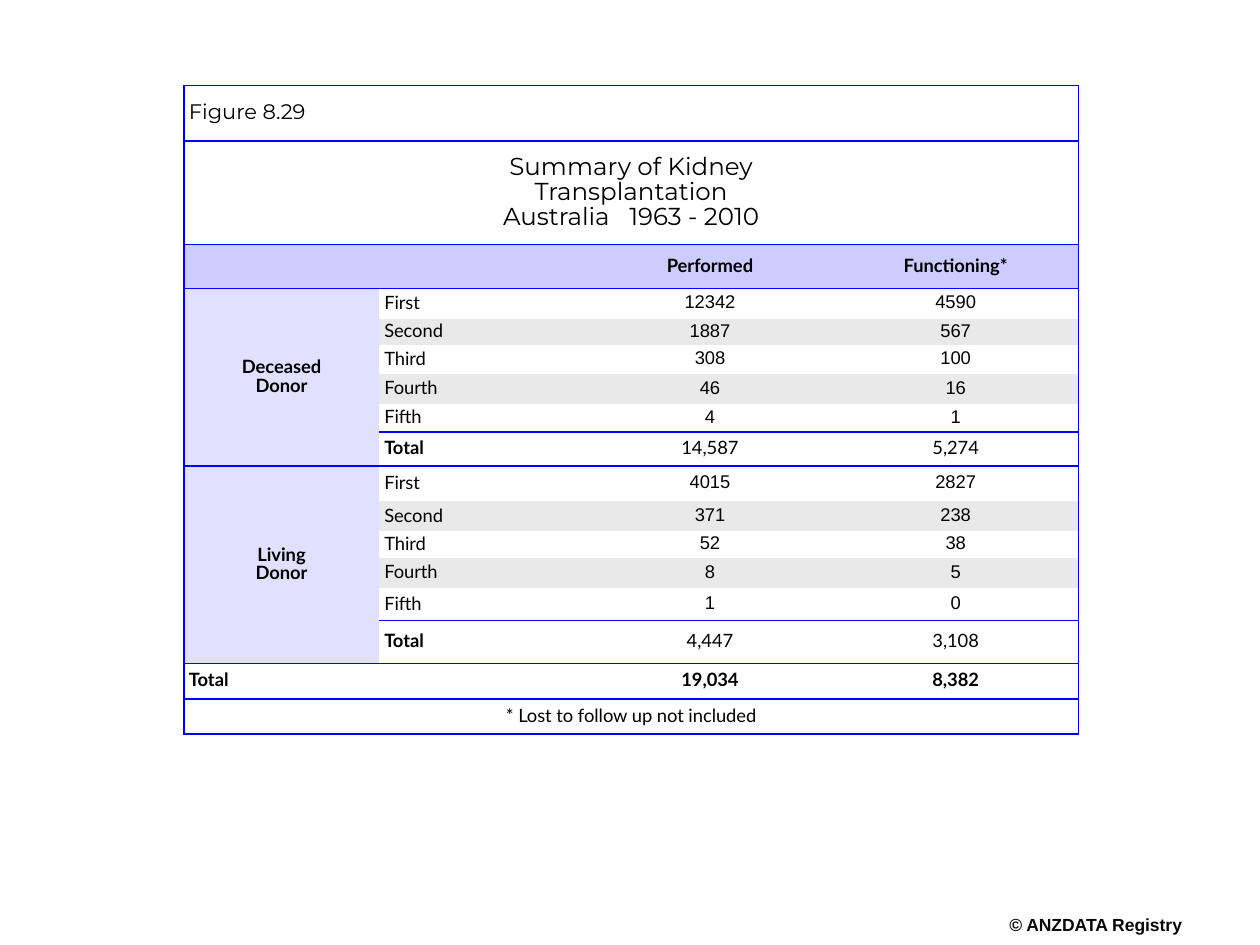
from lxml import etree
from pptx import Presentation
from pptx.dml.color import RGBColor
from pptx.enum.text import MSO_ANCHOR, PP_ALIGN
from pptx.oxml.ns import qn
from pptx.util import Inches, Pt

MIDDLE = MSO_ANCHOR.MIDDLE
LEFT, CENTER = PP_ALIGN.LEFT, PP_ALIGN.CENTER
BLACK = RGBColor(0x00, 0x00, 0x00)
INK = RGBColor(0x08, 0x08, 0x08)
BLUE = RGBColor(0x00, 0x00, 0xFF)
HEADER = RGBColor(0xCC, 0xCC, 0xFF)
DONOR = RGBColor(0xE1, 0xE1, 0xFF)
BAND = RGBColor(0xE9, 0xE9, 0xE9)

FIGURE = {"name": "Montserrat", "size": Pt(12), "bold": False}
TITLE = {"name": "Montserrat", "size": Pt(14), "bold": False}
LABEL = {"name": "Lato", "size": Pt(10.5), "bold": False}
STRONG = {"name": "Lato", "size": Pt(10.5), "bold": True}
NUMBER = {"name": "Arial", "size": Pt(10.5), "bold": False}
CREDIT = {"name": "Arial", "size": Pt(10), "bold": True}

COLS = [1.55, 1.65, 1.95, 1.95]
ROWS = [0.44, 0.82, 0.35, 0.24, 0.21, 0.23, 0.24, 0.22, 0.27,
        0.28, 0.24, 0.21, 0.24, 0.26, 0.34, 0.28, 0.28]
EDGES = {0: 1, 1: 1, 2: 1, 3: 1, 8: 0.75, 9: 1, 14: 0.75, 15: 1, 16: 1, 17: 1}
SPANS = {(0, 0): (1, 4), (1, 0): (1, 4), (3, 0): (6, 1), (9, 0): (6, 1), (16, 0): (1, 4)}
GROUPS = [
    (3, "Deceased", [("First", "12342", "4590"), ("Second", "1887", "567"),
                     ("Third", "308", "100"), ("Fourth", "46", "16"),
                     ("Fifth", "4", "1"), ("Total", "14,587", "5,274")]),
    (9, "Living", [("First", "4015", "2827"), ("Second", "371", "238"),
                   ("Third", "52", "38"), ("Fourth", "8", "5"),
                   ("Fifth", "1", "0"), ("Total", "4,447", "3,108")]),
]


class SlideBuilder:
    def __init__(self, prs):
        self.s = prs.slides.add_slide(prs.slide_layouts[6])
        self.spacing = 0.85
        self.border = BLUE

    def run(self, p, text, style, color=BLACK):
        r = p.add_run()
        r.text = text
        for key, value in style.items():
            setattr(r.font, key, value)
        r.font.color.rgb = color
        return r

    def paragraph(self, tf, first, align, after=None):
        p = tf.paragraphs[0] if first else tf.add_paragraph()
        p.alignment, p.line_spacing = align, self.spacing
        if after is not None:
            p.space_after = after
        return p

    def text(self, x, y, w, h, text, style, color):
        tf = self.s.shapes.add_textbox(*map(Inches, (x, y, w, h))).text_frame
        tf.word_wrap = False
        tf.margin_left = tf.margin_right = tf.margin_top = tf.margin_bottom = 0
        self.run(self.paragraph(tf, True, CENTER), text, style, color)

    def table(self, x, y):
        size = (len(ROWS), len(COLS), Inches(x), Inches(y),
                Inches(sum(COLS)), Inches(sum(ROWS)))
        self.t = self.s.shapes.add_table(*size).table
        self.t.first_row = self.t.horz_banding = False
        for col, width in zip(self.t.columns, COLS):
            col.width = Inches(width)
        for row, height in zip(self.t.rows, ROWS):
            row.height = Inches(height)
        for (r, c), (high, wide) in SPANS.items():
            self.t.cell(r, c).merge(self.t.cell(r + high - 1, c + wide - 1))
        for r in range(len(ROWS)):
            for c in range(len(COLS)):
                self.format_cell(r, c)

    def format_cell(self, r, c):
        cell = self.t.cell(r, c)
        cell.vertical_anchor = MIDDLE
        cell.margin_left = cell.margin_right = Inches(0.04)
        cell.margin_top = cell.margin_bottom = Inches({0: 0.02, 2: 0.04}.get(r, 0.01))
        cell.text_frame.paragraphs[0]._p.get_or_add_endParaRPr().set("sz", "1050")
        high, wide = SPANS.get((r, c), (1, 1))
        inner = c == 0 and cell.is_spanned
        top = 0 if inner else EDGES.get(r, 0)
        bottom = EDGES.get(r + high, 0)
        if inner and r + 1 in (8, 14):
            bottom = 0
        widths = {"lnL": int(c == 0), "lnR": int(c + wide == len(COLS)),
                  "lnT": top, "lnB": bottom}
        for tag, width in widths.items():
            self.line(cell, tag, width)

    def line(self, cell, tag, width):
        ln = etree.SubElement(cell._tc.get_or_add_tcPr(), qn("a:" + tag))
        if width:
            ln.set("w", str(Pt(width)))
            fill = etree.SubElement(ln, qn("a:solidFill"))
            etree.SubElement(fill, qn("a:srgbClr")).set("val", str(self.border))
        else:
            etree.SubElement(ln, qn("a:noFill"))

    def fill(self, r, c, color=None):
        fill = self.t.cell(r, c).fill
        if color is None:
            fill.background()
        else:
            fill.solid()
            fill.fore_color.rgb = color

    def cell(self, r, c, lines, style, align=LEFT, after=None):
        tf = self.t.cell(r, c).text_frame
        for i, text in enumerate(lines):
            self.run(self.paragraph(tf, i == 0, align, after), text, style)
        return tf


def main():
    prs = Presentation()
    prs.slide_width, prs.slide_height = Inches(10), Inches(7.5)
    b = SlideBuilder(prs)
    b.text(7.99, 7.28, 1.41, 0.17, "© ANZDATA Registry", CREDIT, INK)
    b.table(1.46, 0.68)

    for r in range(len(ROWS)):
        for c in range(len(COLS)):
            color = HEADER if r == 2 else None
            if 3 <= r < 15:
                color = DONOR if c == 0 else BAND if r in (4, 6, 10, 12) else None
            b.fill(r, c, color)

    b.cell(0, 0, ["Figure 8.29"], FIGURE)
    tf = b.cell(1, 0, ["Summary of Kidney", "Transplantation", "Australia"], TITLE, CENTER)
    gap = b.run(tf.paragraphs[-1], " ", TITLE)
    gap._r.get_or_add_rPr().set("spc", "740")
    b.run(tf.paragraphs[-1], "1963 - 2010", TITLE)
    for c, heading in enumerate(["Performed", "Functioning*"], 2):
        b.cell(2, c, [heading], STRONG, CENTER)

    for top, donor, rows in GROUPS:
        tf = b.cell(top, 0, [donor, "Donor"], STRONG, CENTER)
        pPr = tf.paragraphs[1]._p.get_or_add_pPr()
        pPr.set("marL", "0")
        pPr.set("indent", str(-Inches(0.11)))
        for r, (name, *counts) in enumerate(rows, top):
            total = name == "Total"
            b.cell(r, 1, [name], STRONG if total else LABEL)
            for c, count in enumerate(counts, 2):
                b.cell(r, c, [count], LABEL if total else NUMBER, CENTER, Pt(14))

    b.cell(15, 0, ["Total"], STRONG)
    for c, count in enumerate(["19,034", "8,382"], 2):
        b.cell(15, c, [count], STRONG, CENTER, Pt(14))
    b.cell(16, 0, ["* Lost to follow up not included"], LABEL, CENTER)
    prs.save("out.pptx")


if __name__ == "__main__":
    main()
